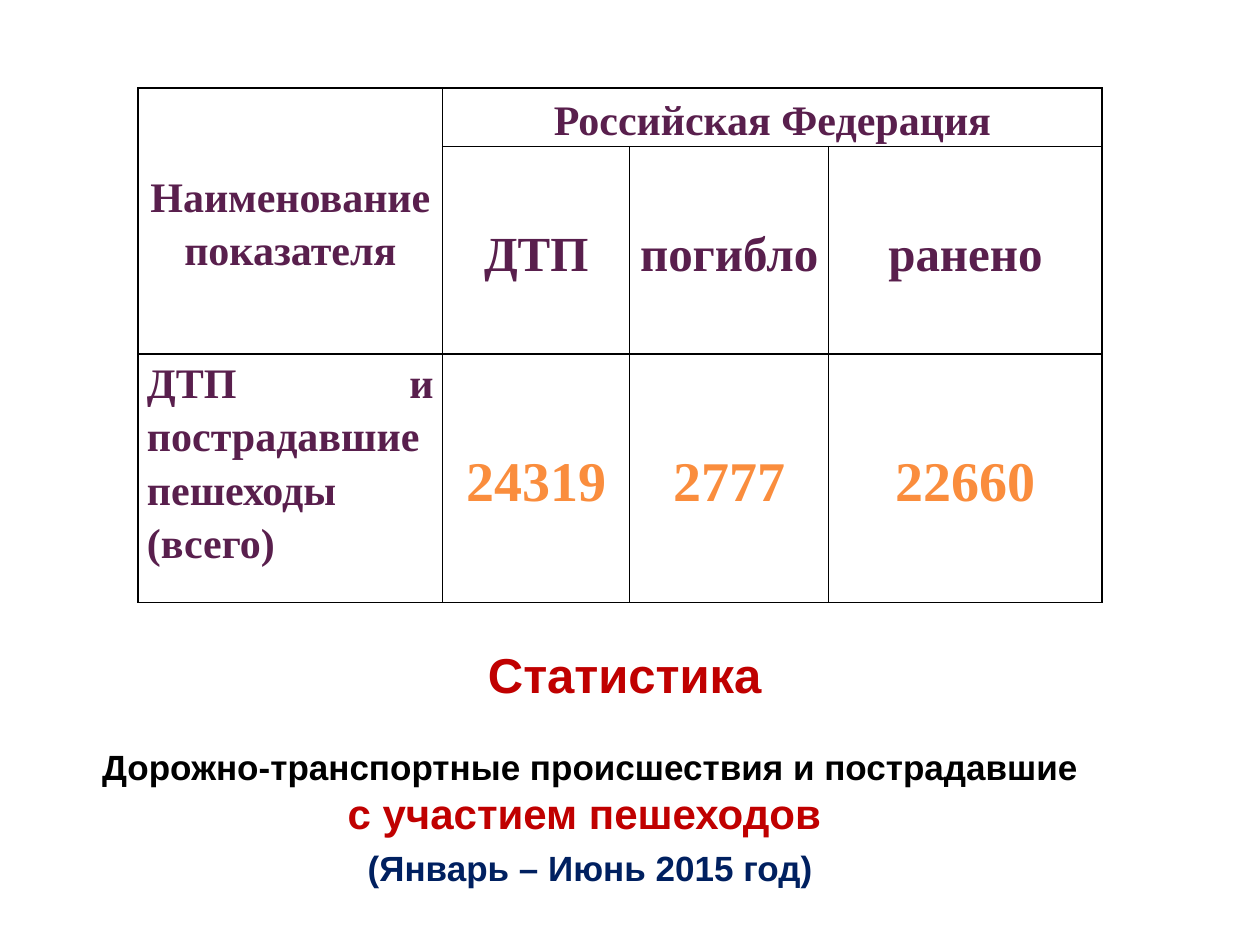
from lxml import etree
from pptx import Presentation
from pptx.dml.color import RGBColor
from pptx.enum.text import MSO_ANCHOR, PP_ALIGN
from pptx.oxml.ns import qn
from pptx.util import Pt

MID, TOP = MSO_ANCHOR.MIDDLE, MSO_ANCHOR.TOP
CENTER, JUST = PP_ALIGN.CENTER, PP_ALIGN.JUSTIFY
SANS, SERIF = "Arial", "Times New Roman"
BLACK, WHITE, RED, NAVY = "000000", "FFFFFF", "C00000", "002060"
PLUM, ORANGE = "591F4D", "FA8D3D"


def color(code):
    return RGBColor.from_string(code)


class Page:
    def __init__(self, slide):
        self.slide = slide
        self.inset = 5.2
        self.space = 1.15

    def run(self, para, text, font, size, code):
        run = para.add_run()
        run.text = text
        run.font.name = font
        run.font.size = Pt(size)
        run.font.bold = True
        run.font.color.rgb = color(code)

    def text(self, box, paras, anchor=TOP, gap=0):
        frame = self.slide.shapes.add_textbox(*map(Pt, box)).text_frame
        frame.word_wrap = True
        frame.vertical_anchor = anchor
        for i, runs in enumerate(paras):
            para = frame.add_paragraph() if i else frame.paragraphs[0]
            para.alignment = CENTER
            para.space_before = Pt(gap if i else 0)
            for text, size, code in runs:
                self.run(para, text, SANS, size, code)

    def border(self, cell):
        props = cell._tc.get_or_add_tcPr()
        for i, side in enumerate(("lnL", "lnR", "lnT", "lnB")):
            line = etree.Element(qn("a:" + side), w=str(Pt(1)))
            fill = etree.SubElement(line, qn("a:solidFill"))
            etree.SubElement(fill, qn("a:srgbClr"), val=BLACK)
            props.insert(i, line)

    def table(self, left, top, cols, rows):
        frame = self.slide.shapes.add_table(
            len(rows), len(cols), Pt(left), Pt(top), Pt(sum(cols)), Pt(sum(rows)))
        grid = frame.table
        grid.first_row = grid.horz_banding = False
        for col, width in zip(grid.columns, cols):
            col.width = Pt(width)
        for row, height in zip(grid.rows, rows):
            row.height = Pt(height)
        for cell in grid.iter_cells():
            cell.fill.solid()
            cell.fill.fore_color.rgb = color(WHITE)
            cell.margin_left = cell.margin_right = Pt(self.inset)
            cell.margin_top = cell.margin_bottom = 0
            self.border(cell)
        return grid

    def cell(self, cell, text, size, code=PLUM, align=CENTER, anchor=MID):
        cell.vertical_anchor = anchor
        para = cell.text_frame.paragraphs[0]
        para.alignment = align
        para.line_spacing = self.space
        self.run(para, text, SERIF, size, code)


def main():
    deck = Presentation()
    deck.slide_width, deck.slide_height = Pt(720), Pt(540)
    page = Page(deck.slides.add_slide(deck.slide_layouts[6]))

    page.text((141, 360, 432, 50.4), [[("Статистика", 28, RED)]], MID)

    grid = page.table(78.8, 50.4, (174.2, 106.8, 113.8, 156.2), (33.4, 118.6, 142))
    grid.cell(0, 0).merge(grid.cell(1, 0))
    grid.cell(0, 1).merge(grid.cell(0, 3))
    page.cell(grid.cell(0, 0), "Наименование показателя", 24)
    page.cell(grid.cell(0, 1), "Российская Федерация", 24)
    page.cell(grid.cell(2, 0), "ДТП и пострадавшие пешеходы (всего)", 24,
              align=JUST, anchor=TOP)
    stats = (("ДТП", "24319"), ("погибло", "2777"), ("ранено", "22660"))
    for i, (head, count) in enumerate(stats, 1):
        page.cell(grid.cell(1, i), head, 28)
        page.cell(grid.cell(2, i), count, 32, ORANGE)

    page.text((44.6, 422.6, 585.4, 89.3), [
        [("Дорожно-транспортные происшествия и пострадавшие ", 20, BLACK),
         ("с участием пешеходов ", 24, RED)],
        [("(Январь – Июнь 2015 год)", 20, NAVY)],
    ], gap=5)

    deck.save("out.pptx")


if __name__ == "__main__":
    main()
